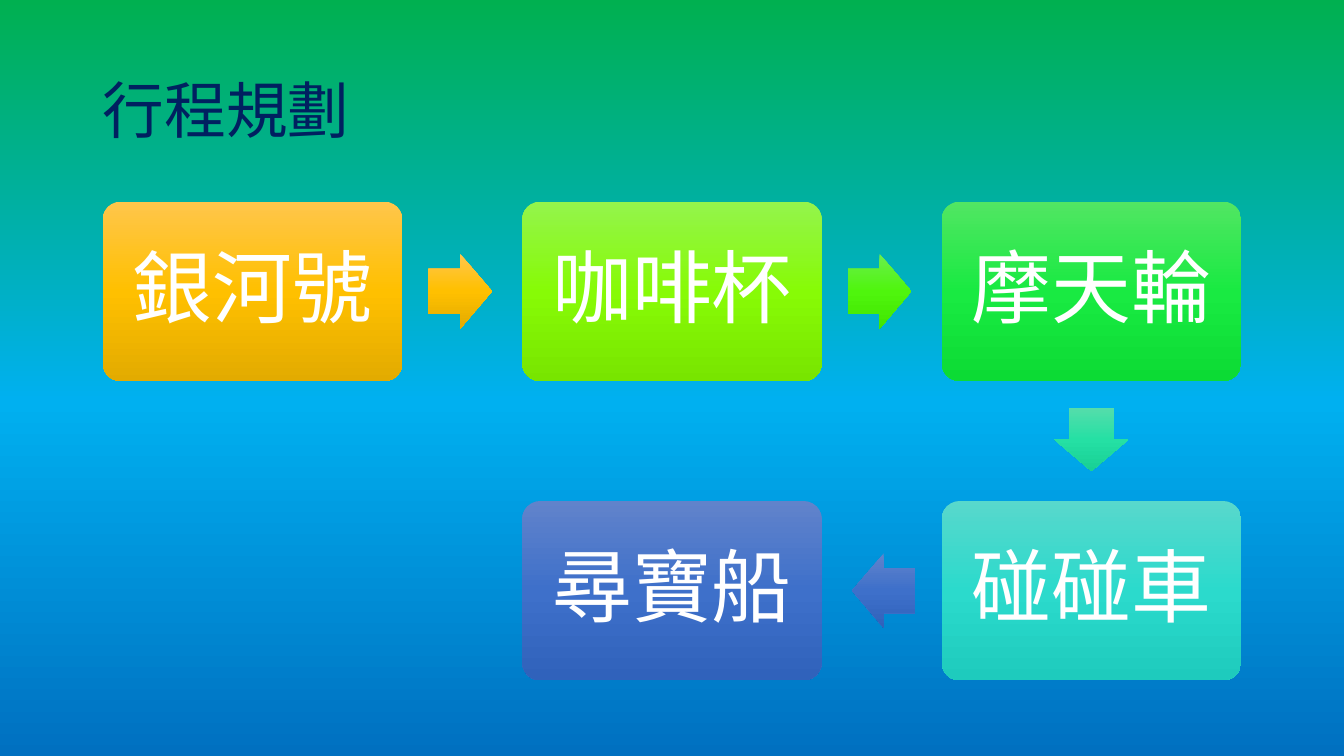
from pptx import Presentation
from pptx.dml.color import RGBColor
from pptx.enum.shapes import MSO_SHAPE
from pptx.enum.text import MSO_ANCHOR, PP_ALIGN
from pptx.oxml.ns import qn
from pptx.util import Inches, Pt
from lxml.etree import SubElement

CARD_WIDTH, CARD_HEIGHT = 2.97, 1.78
COLUMN_STEP, ROW_STEP = 4.16, 2.97
ARROW_WIDTH, ARROW_HEIGHT = 0.63, 0.74
WHITE, NAVY = "FFFFFF", "002060"
BACKGROUND = [(0, "00B050"), (53, "00B0F0"), (100, "0070C0")]
AMBER = ["FFC64B", "FFC000", "E3AB00"]
BLUE = ["6183CB", "3E70CA", "3062BB"]
STOPS = [
    ("銀河號", 0, 0, AMBER),
    ("咖啡杯", 1, 0, ["94F44C", "87FB06", "78E500"]),
    ("摩天輪", 2, 0, ["51E663", "19EA42", "0CDB34"]),
    ("碰碰車", 2, 1, ["58D8CC", "2BDACC", "1ECBBD"]),
    ("尋寶船", 1, 1, BLUE),
]
ARROWS = [
    (3.23, 0.52, 0, AMBER),
    (7.39, 0.52, 0, ["6BEF4D", "4FF50D", "41E500"]),
    (9.49, 1.99, 90, ["55DDAB", "25E0A4", "18D095"]),
    (7.43, 3.49, 180, BLUE),
]


def color(value):
    """Return the colour for a hex string."""
    return RGBColor.from_string(value)


def fill_gradient(fill, element, stops):
    """Fill from top to bottom with (percent, colour) stops."""
    fill.gradient()
    fill.gradient_angle = 270
    gradient = next(element.iter(qn("a:gradFill")))
    gradient.set("rotWithShape", "0")
    stop_list = gradient.find(qn("a:gsLst"))
    for stop in list(stop_list):
        stop_list.remove(stop)
    for percent, value in stops:
        stop = SubElement(stop_list, qn("a:gs"), pos=str(percent * 1000))
        SubElement(stop, qn("a:srgbClr"), val=value)


def write_text(shape, text, size, font, value, alignment):
    """Write one vertically centred line of text."""
    frame = shape.text_frame
    frame.word_wrap = True
    frame.vertical_anchor = MSO_ANCHOR.MIDDLE
    paragraph = frame.paragraphs[0]
    paragraph.alignment = alignment
    paragraph.line_spacing = 0.9
    run = paragraph.add_run()
    run.text = text
    run.font.size = Pt(size)
    run.font.name = font
    run.font.color.rgb = color(value)


def add_block(slide, kind, left, top, width, height, colors):
    """Add a borderless shape with a three-colour gradient."""
    shape = slide.shapes.add_shape(
        kind, Inches(left), Inches(top), Inches(width), Inches(height))
    shape.shadow.inherit = False
    shape.line.fill.background()
    fill_gradient(shape.fill, shape.element, zip((0, 50, 100), colors))
    return shape


def add_title(slide, left, top, width, height):
    """Place and format the title in its box."""
    title = slide.shapes.title
    title.left, title.top = Inches(left), Inches(top)
    title.width, title.height = Inches(width), Inches(height)
    write_text(title, "行程規劃", 44, "Noto Sans CJK JP", NAVY, PP_ALIGN.LEFT)


def add_route(slide, left, top):
    """Draw the stops and the arrows between them from a top left corner."""
    for name, column, row, colors in STOPS:
        card = add_block(
            slide, MSO_SHAPE.ROUNDED_RECTANGLE, left + column * COLUMN_STEP,
            top + row * ROW_STEP, CARD_WIDTH, CARD_HEIGHT, colors)
        card.adjustments[0] = 0.1
        frame = card.text_frame
        frame.margin_left = frame.margin_right = Inches(0.2)
        frame.margin_top = frame.margin_bottom = Inches(0.2)
        write_text(card, name, 57, "Calibri", WHITE, PP_ALIGN.CENTER)
    for across, down, rotation, colors in ARROWS:
        arrow = add_block(
            slide, MSO_SHAPE.RIGHT_ARROW, left + across, top + down,
            ARROW_WIDTH, ARROW_HEIGHT, colors)
        arrow.adjustments[0] = 0.6
        arrow.adjustments[1] = 0.5
        arrow.rotation = rotation


def main():
    """Build and save the itinerary slide."""
    presentation = Presentation()
    presentation.slide_width = Inches(13.33)
    presentation.slide_height = Inches(7.5)
    slide = presentation.slides.add_slide(presentation.slide_layouts[5])
    fill_gradient(slide.background.fill, slide.element, BACKGROUND)
    add_title(slide, 0.92, 0.4, 11.5, 1.45)
    add_route(slide, 1.02, 2)
    presentation.save("out.pptx")


if __name__ == "__main__":
    main()
